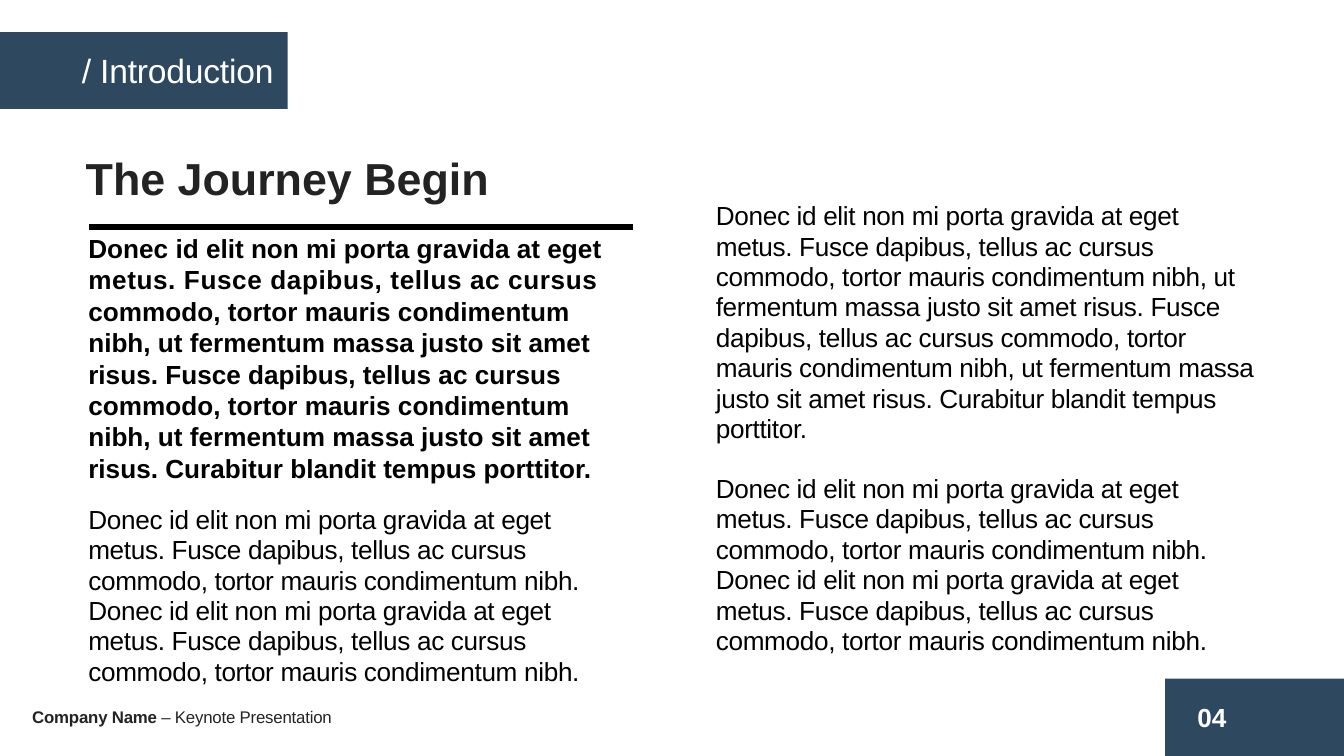
"""Build the introduction slide with a heading, two text columns and a footer."""
from lxml.etree import SubElement
from pptx import Presentation
from pptx.dml.color import RGBColor
from pptx.enum.shapes import MSO_CONNECTOR, MSO_SHAPE
from pptx.enum.text import MSO_AUTO_SIZE
from pptx.oxml.ns import qn
from pptx.util import Cm, Pt

NAVY, INK, BLACK, WHITE = "2E4860", "232323", "000000", "FFFFFF"
LEFT, RIGHT = 1.42, 13.28

OPENING = "Donec id elit non mi porta gravida at eget "
SECOND = "metus. Fusce dapibus, tellus ac cursus "
REST = (
    "commodo, tortor mauris condimentum nibh, ut fermentum massa justo sit amet risus. "
    "Fusce dapibus, tellus ac cursus commodo, tortor mauris condimentum nibh, "
    "ut fermentum massa justo sit amet risus. Curabitur blandit tempus porttitor."
)
SHORT = OPENING + SECOND + "commodo, tortor mauris condimentum nibh."

BANDS = [(22.02, 12.83, 3.38, 1.46), (0, 0.61, 5.44, 1.45)]
RULE = (1.68, 4.29, 11.96, 4.29)

# Each span is (text, bold, letter spacing in points).
TEXTS = [
    ((0.36, 13.23, 8.2, 0.64), 9, INK, 1,
     [[("Company Name ", True, -0.1), ("– Keynote Presentation", False, -0.1)]]),
    ((22.38, 13.13, 1.27, 0.86), 14, WHITE, 1, [[("04", True, 0)]]),
    ((1.3, 0.81, 4.62, 1.02), 18, WHITE, 1, [[("/ Introduction", False, -0.1)]]),
    ((1.37, 2.72, 10.92, 1.27), 24, INK, 1, [[("The Journey Begin", True, 0)]]),
    ((LEFT, 4.27, 10.8, 5.05), 14, BLACK, 1,
     [[(OPENING, True, 0), (SECOND, True, 0.3), (REST, True, 0)]]),
    ((RIGHT, 3.68, 10.69, 4.9), 14, BLACK, 0.97,
     [[(OPENING + SECOND + REST, False, -0.2)]]),
] + [
    ((left, top, 10.24, 3.73), 14, BLACK, 0.97, [[(SHORT, False, -0.2)]] * 2)
    for left, top in [(RIGHT, 8.84), (LEFT, 9.42)]
]


def color(code):
    return RGBColor.from_string(code)


def add_band(page, frame):
    band = page.shapes.add_shape(MSO_SHAPE.RECTANGLE, *map(Cm, frame))
    band.shadow.inherit = False
    band.fill.solid()
    band.fill.fore_color.rgb = color(NAVY)
    band.line.fill.background()


def add_rule(page, ends):
    rule = page.shapes.add_connector(MSO_CONNECTOR.STRAIGHT, *map(Cm, ends))
    rule.line.color.rgb = color(BLACK)
    rule.line.width = Pt(3)
    SubElement(rule._element.spPr, qn("a:effectLst"))


def add_text(page, frame, size, code, line_spacing, paragraphs):
    box = page.shapes.add_textbox(*map(Cm, frame))
    text_frame = box.text_frame
    text_frame.word_wrap = True
    text_frame.auto_size = MSO_AUTO_SIZE.SHAPE_TO_FIT_TEXT
    for index, spans in enumerate(paragraphs):
        para = text_frame.add_paragraph() if index else text_frame.paragraphs[0]
        para.line_spacing = line_spacing
        for text, bold, spacing in spans:
            span = para.add_run()
            span.text = text
            span.font.name = "Arial"
            span.font.size = Pt(size)
            span.font.bold = bold
            span.font.color.rgb = color(code)
            span.font._element.set("spc", str(round(spacing * 100)))


def main():
    deck = Presentation()
    deck.slide_width, deck.slide_height = Cm(25.4), Cm(14.29)
    page = deck.slides.add_slide(deck.slide_layouts[6])
    for frame in BANDS:
        add_band(page, frame)
    add_rule(page, RULE)
    for text in TEXTS:
        add_text(page, *text)
    deck.save("out.pptx")


if __name__ == "__main__":
    main()
